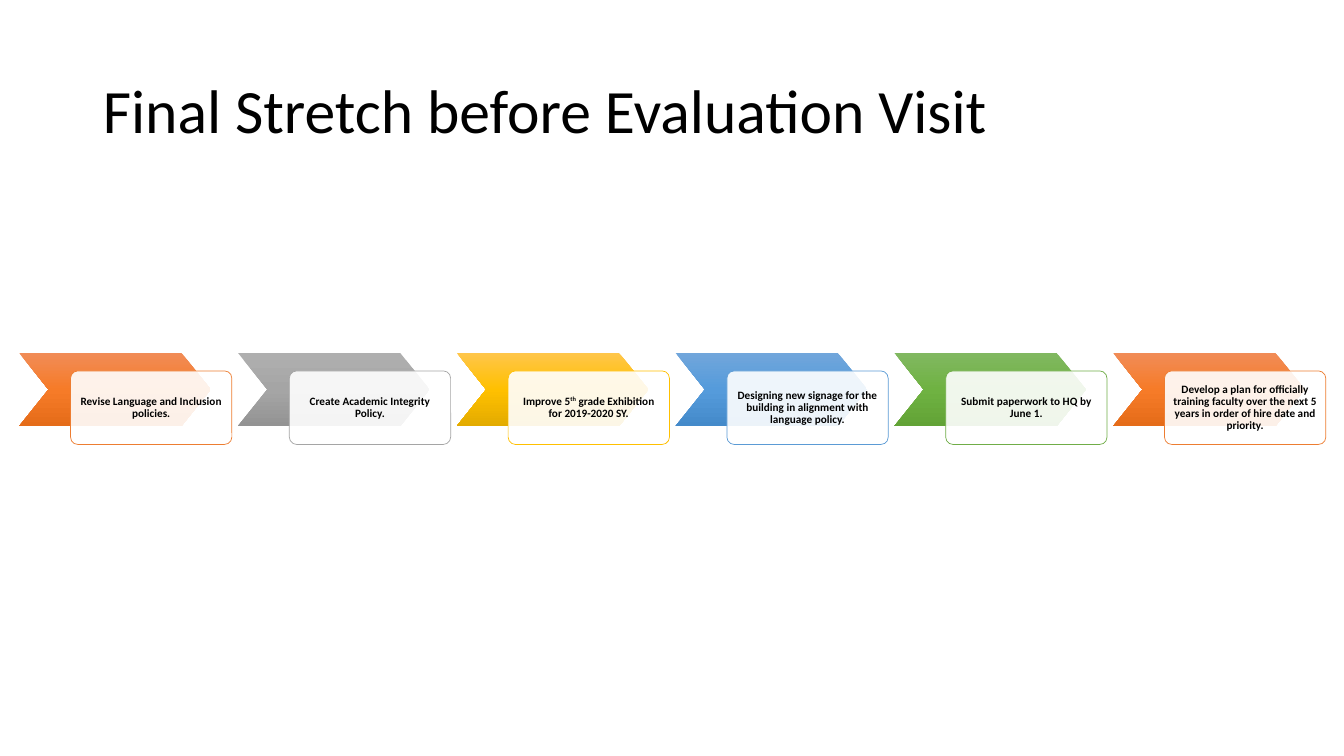
from copy import deepcopy

from pptx import Presentation
from pptx.dml.color import RGBColor
from pptx.enum.shapes import MSO_SHAPE
from pptx.enum.text import MSO_ANCHOR, MSO_AUTO_SIZE, PP_ALIGN
from pptx.oxml.ns import qn
from pptx.oxml.xmlchemy import OxmlElement
from pptx.util import Inches, Pt

CHEVRON = MSO_SHAPE.CHEVRON
ROUND = MSO_SHAPE.ROUNDED_RECTANGLE
MIDDLE = MSO_ANCHOR.MIDDLE
LEFT, CENTER = PP_ALIGN.LEFT, PP_ALIGN.CENTER
NO_FIT = MSO_AUTO_SIZE.NONE

BLACK = RGBColor(0x00, 0x00, 0x00)
WHITE = RGBColor(0xFF, 0xFF, 0xFF)
# Each theme: card outline, then the chevron's gradient from top to bottom
ORANGE = (RGBColor(0xED, 0x7D, 0x31), RGBColor(0xF1, 0x8C, 0x57),
          RGBColor(0xF6, 0x7B, 0x28), RGBColor(0xE5, 0x6C, 0x19))
GRAY = (RGBColor(0xA5, 0xA5, 0xA5), RGBColor(0xAF, 0xAF, 0xAF),
        RGBColor(0xA5, 0xA5, 0xA5), RGBColor(0x93, 0x93, 0x93))
GOLD = (RGBColor(0xFF, 0xC0, 0x00), RGBColor(0xFF, 0xC6, 0x4B),
        RGBColor(0xFF, 0xC0, 0x00), RGBColor(0xE3, 0xAB, 0x00))
BLUE = (RGBColor(0x5B, 0x9B, 0xD5), RGBColor(0x71, 0xA6, 0xDB),
        RGBColor(0x55, 0x9B, 0xDB), RGBColor(0x44, 0x8A, 0xCA))
GREEN = (RGBColor(0x70, 0xAD, 0x47), RGBColor(0x81, 0xB8, 0x61),
         RGBColor(0x6F, 0xB2, 0x42), RGBColor(0x62, 0xA3, 0x36))

STEPS = [
    ("Revise Language and Inclusion policies.", ORANGE),
    ("Create Academic Integrity Policy.", GRAY),
    ("Improve 5^th^ grade Exhibition for 2019-2020 SY.", GOLD),
    ("Designing new signage for the building in alignment with "
     "language policy.", BLUE),
    ("Submit paperwork to HQ by June 1.", GREEN),
    ("Develop a plan for officially training faculty over the next 5 years "
     "in order of hire date and priority.", ORANGE),
]
START, PITCH = 0.19, 2.17


def write(frame, text, size, align=LEFT, bold=False, inset=None,
          font="Calibri", color=BLACK):
    """Fill a text frame; words between carets become superscript."""
    frame.word_wrap = True
    frame.auto_size = NO_FIT
    frame.vertical_anchor = MIDDLE
    if inset is not None:
        frame.margin_left = frame.margin_right = Inches(inset)
        frame.margin_top = frame.margin_bottom = Inches(inset)
    para = frame.paragraphs[0]
    para.alignment = align
    para.line_spacing = 0.9
    for i, part in enumerate(text.split("^")):
        run = para.add_run()
        run.text = part
        run.font.name = font
        run.font.size = Pt(size)
        run.font.bold = bold
        run.font.color.rgb = color
        if i % 2:
            run.font._element.set("baseline", "30000")


class Deck:
    def __init__(self):
        self.prs = Presentation()
        self.prs.slide_width = Inches(13.33)
        self.prs.slide_height = Inches(7.5)
        self.slide = self.prs.slides.add_slide(self.prs.slide_layouts[5])
        self.flow = self.slide.shapes.add_group_shape()

    def title(self, text):
        box = self.slide.shapes.title
        box.left, box.top = Inches(0.92), Inches(0.4)
        box.width, box.height = Inches(11.5), Inches(1.45)
        write(box.text_frame, text, 44)

    def shape(self, kind, x, y, w, h, adj):
        item = self.flow.shapes.add_shape(
            kind, Inches(x), Inches(y), Inches(w), Inches(h))
        item.adjustments[0] = adj
        item.shadow.inherit = False
        return item

    def arrow(self, x, shades):
        item = self.shape(CHEVRON, x, 3.5, 1.9, 0.73, 0.4)
        item.line.fill.background()
        item.fill.gradient()
        item.fill.gradient_angle = 270
        stops = item._element.spPr.find(qn("a:gradFill")).find(qn("a:gsLst"))
        stops.insert(1, deepcopy(stops[0]))
        for i, (stop, shade) in enumerate(zip(item.fill.gradient_stops, shades)):
            stop.position = i / 2
            stop.color.rgb = shade

    def card(self, x, text, edge):
        item = self.shape(ROUND, x, 3.68, 1.6, 0.73, 0.1)
        item.fill.solid()
        item.fill.fore_color.rgb = WHITE
        alpha = OxmlElement("a:alpha")
        alpha.set("val", "90000")
        item._element.spPr.find(qn("a:solidFill"))[0].append(alpha)
        item.line.color.rgb = edge
        item.line.width = Pt(0.5)
        write(item.text_frame, text, 8, align=CENTER, bold=True, inset=0.06)


def main():
    deck = Deck()
    deck.title("Final Stretch before Evaluation Visit")
    for i, (text, (edge, *shades)) in enumerate(STEPS):
        x = START + i * PITCH
        deck.arrow(x, shades)
        deck.card(x + 0.51, text, edge)
    deck.prs.save("out.pptx")


if __name__ == "__main__":
    main()
